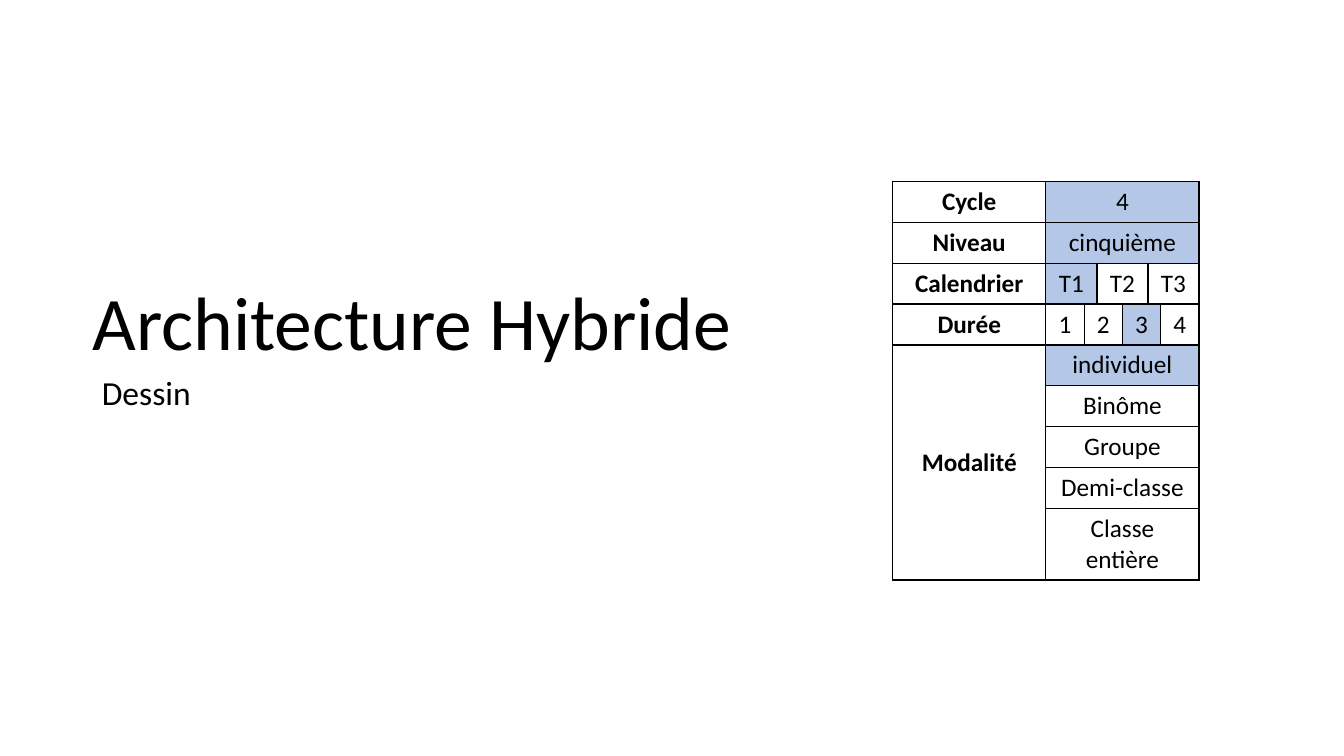
from dataclasses import dataclass

from lxml.etree import SubElement
from pptx import Presentation
from pptx.dml.color import RGBColor
from pptx.enum.text import MSO_ANCHOR, MSO_AUTO_SIZE, PP_ALIGN
from pptx.oxml.ns import qn
from pptx.util import Pt


@dataclass(frozen=True)
class Theme:
    font: str = "Calibri"
    ink: RGBColor = RGBColor(0x00, 0x00, 0x00)
    paper: RGBColor = RGBColor(0xFF, 0xFF, 0xFF)
    chosen: RGBColor = RGBColor(0xB4, 0xC7, 0xE7)
    title_size: int = 54
    subtitle_size: int = 24
    table_size: int = 18
    border: int = 1


THEME = Theme()

# Label, its rows of options, and the chosen option
CRITERIA = [
    ("Cycle", [["4"]], "4"),
    ("Niveau", [["cinquième"]], "cinquième"),
    ("Calendrier", [["T1", "T2", "T3"]], "T1"),
    ("Durée", [["1", "2", "3", "4"]], "3"),
    ("Modalité",
     [["individuel"], ["Binôme"], ["Groupe"], ["Demi-classe"], ["Classe entière"]],
     "individuel"),
]

# Column edges, in twelfths of the option area, that serve one, three or four options
OPTION_EDGES = [0, 3, 4, 6, 8, 9, 12]


def write(frame, text, size, bold=False, line_spacing=1.0):
    frame.text = text
    paragraph = frame.paragraphs[0]
    paragraph.alignment = PP_ALIGN.CENTER
    paragraph.line_spacing = line_spacing
    paragraph.space_before = Pt(0)
    font_format = {"name": THEME.font, "size": Pt(size), "bold": bold}
    for attribute, value in font_format.items():
        setattr(paragraph.font, attribute, value)
    paragraph.font.color.rgb = THEME.ink


def add_heading(slide, left, top, title, subtitle):
    title_height = 71.3
    heading = slide.shapes.title
    title_box = {"left": Pt(left), "top": Pt(top),
                 "width": Pt(642.2), "height": Pt(title_height)}
    for attribute, value in title_box.items():
        setattr(heading, attribute, value)
    subheading = slide.shapes.add_textbox(
        Pt(left + 13), Pt(top + title_height), Pt(236.2), Pt(38.9))

    for shape, text, size, anchor in (
        (heading, title, THEME.title_size, MSO_ANCHOR.BOTTOM),
        (subheading, subtitle, THEME.subtitle_size, MSO_ANCHOR.TOP),
    ):
        frame_format = {"word_wrap": True, "auto_size": MSO_AUTO_SIZE.NONE,
                        "vertical_anchor": anchor}
        for attribute, value in frame_format.items():
            setattr(shape.text_frame, attribute, value)
        write(shape.text_frame, text, size, line_spacing=0.9)


def style_cell(cell, colour):
    """Fill the cell and draw its four borders."""
    cell.fill.solid()
    cell.fill.fore_color.rgb = colour
    properties = cell._tc.get_or_add_tcPr()
    for position, side in enumerate(("lnL", "lnR", "lnT", "lnB")):
        line = SubElement(properties, qn(f"a:{side}"), w=str(Pt(THEME.border)))
        fill = SubElement(line, qn("a:solidFill"))
        SubElement(fill, qn("a:srgbClr"), val=str(THEME.ink))
        properties.insert(position, line)


def fill_block(table, first, last, text, colour, bold=False):
    """Merge the cells from first to last, given as (row, column), and write the text."""
    for row in range(first[0], last[0] + 1):
        for column in range(first[1], last[1] + 1):
            style_cell(table.cell(row, column), colour)
    origin = table.cell(*first)
    if first != last:
        origin.merge(table.cell(*last))
    write(origin.text_frame, text, THEME.table_size, bold)
    if last[0] > first[0]:
        origin.vertical_anchor = MSO_ANCHOR.MIDDLE


def add_criteria_table(slide, left, top, width, row_height):
    row_count = sum(len(option_rows) for _, option_rows, _ in CRITERIA)
    table = slide.shapes.add_table(
        row_count, len(OPTION_EDGES), Pt(left), Pt(top),
        Pt(width), Pt(row_height * row_count)).table
    for flag in ("first_row", "horz_banding"):
        setattr(table, flag, False)

    half = width / 2
    twelfth = half / OPTION_EDGES[-1]
    widths = [half] + [(end - start) * twelfth
                       for start, end in zip(OPTION_EDGES, OPTION_EDGES[1:])]
    for column, column_width in zip(table.columns, widths):
        column.width = Pt(column_width)

    row = 0
    for label, option_rows, chosen in CRITERIA:
        fill_block(table, (row, 0), (row + len(option_rows) - 1, 0),
                   label, THEME.paper, bold=True)
        for options in option_rows:
            share = OPTION_EDGES[-1] // len(options)
            for index, option in enumerate(options):
                start = OPTION_EDGES.index(index * share) + 1
                end = OPTION_EDGES.index((index + 1) * share)
                colour = THEME.chosen if option == chosen else THEME.paper
                fill_block(table, (row, start), (row, end), option, colour)
            row += 1


def main():
    deck = Presentation()
    deck.slide_width, deck.slide_height = Pt(960), Pt(540)
    slide = deck.slides.add_slide(deck.slide_layouts.get_by_name("Title Only"))
    add_heading(slide, -26.6, 194.4, "Architecture Hybride", "Dessin")
    add_criteria_table(slide, 637.6, 129.6, 219, 23)
    deck.save("out.pptx")


if __name__ == "__main__":
    main()
